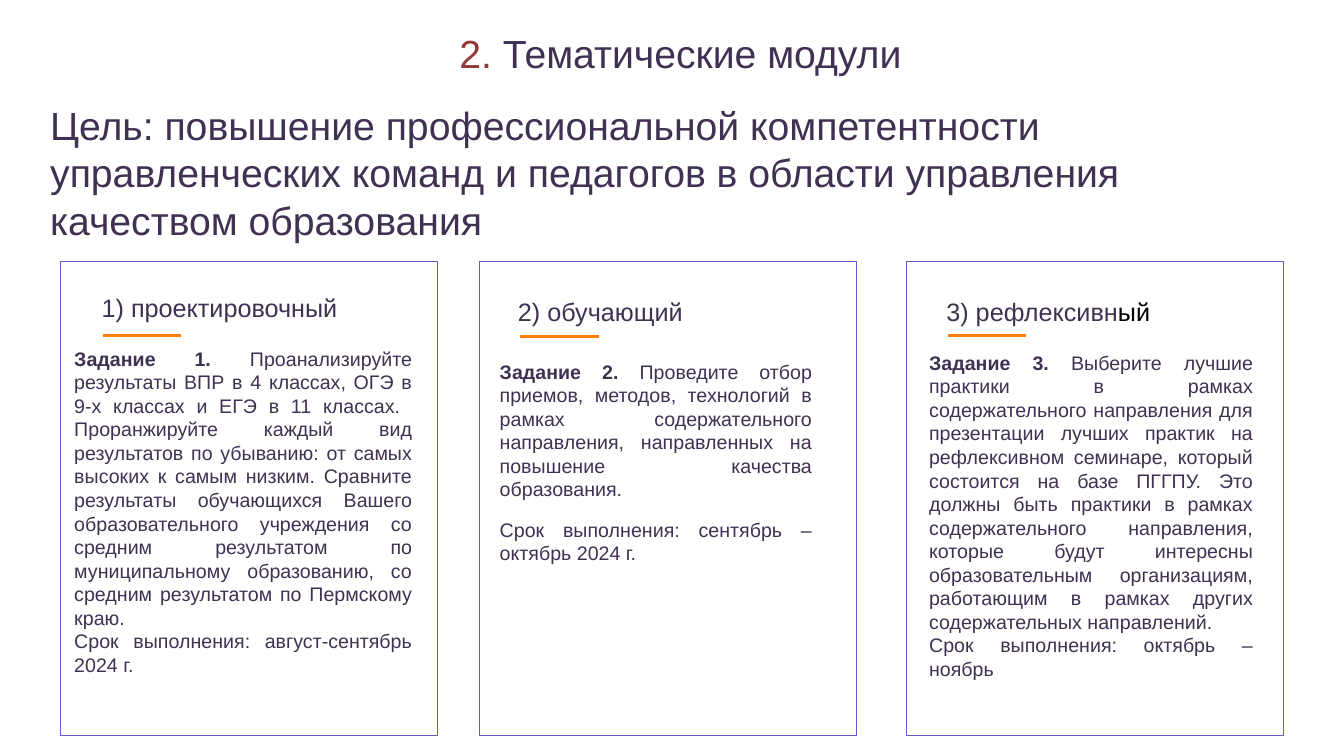
from lxml import etree
from pptx import Presentation
from pptx import util as u
from pptx.dml.color import RGBColor
from pptx.enum import shapes, text
from pptx.oxml.ns import qn

PLUM = RGBColor(0x40, 0x31, 0x52)
BRICK = RGBColor(0x95, 0x37, 0x35)
VIOLET = RGBColor(0x71, 0x54, 0xC6)
ORANGE = RGBColor(0xFF, 0x7E, 0x00)
BLACK = RGBColor(0, 0, 0)

PANEL_TOP, PANEL_W, PANEL_H = 186.5, 269.3, 339
RULE_W = 56

TITLE = [[("2. ", {"color": BRICK}), ("Тематические модули", {})]]
GOAL = [[("Цель: повышение профессиональной компетентности управленческих "
          "команд и педагогов в области управления качеством образования", {})]]

# Boxes are (left, top, width, height) in points; rule is (left, y)
MODULES = [
    {
        "panel": 43.2, "rule": (73.4, 239.8),
        "heading": [("1) проектировочный", {})],
        "heading_box": (65.5, 205.2, 202.3, 29),
        "task": ("Задание 1. ",
                 "Проанализируйте результаты ВПР в 4 классах, ОГЭ в 9-х классах "
                 "и ЕГЭ в 11 классах.  Проранжируйте каждый вид результатов по "
                 "убыванию: от самых высоких к самым низким. Сравните результаты "
                 "обучающихся Вашего образовательного учреждения со средним "
                 "результатом по муниципальному образованию, со средним "
                 "результатом по Пермскому краю. "),
        "deadline": "Срок выполнения: август-сентябрь 2024 г. ",
        "task_box": (44.6, 244.1, 257, 262), "gap": 0, "right_inset": 7.2,
    },
    {
        "panel": 342.7, "rule": (371.6, 240.5),
        "heading": [("2) обучающий", {})],
        "heading_box": (362.9, 208, 174.2, 29),
        "task": ("Задание 2. ",
                 "Проведите отбор приемов, методов, технологий в рамках "
                 "содержательного направления, направленных на повышение "
                 "качества образования."),
        "deadline": "Срок выполнения: сентябрь – октябрь 2024 г. ",
        "task_box": (348.5, 253.4, 252, 184.3), "gap": 12, "right_inset": 20.4,
    },
    {
        "panel": 647.3, "rule": (677, 239.8),
        "heading": [("3) рефлексивн", {}), ("ый", {"color": BLACK})],
        "heading_box": (668.9, 208, 226, 29),
        "task": ("Задание 3.",
                 " Выберите лучшие практики в рамках содержательного направления "
                 "для презентации лучших практик на рефлексивном семинаре, "
                 "который состоится на базе ПГГПУ. Это должны быть практики в "
                 "рамках содержательного направления, которые будут интересны "
                 "образовательным организациям, работающим в рамках других "
                 "содержательных направлений."),
        "deadline": "Срок выполнения: октябрь –ноябрь",
        "task_box": (655.2, 247, 247, 296), "gap": 0, "right_inset": 7.2,
    },
]


class SlideBuilder:
    def __init__(self, slide, font="Arial", color=PLUM):
        self.s, self.font, self.color = slide, font, color

    def panel(self, left, top, width, height):
        sp = self.s.shapes.add_shape(shapes.MSO_SHAPE.RECTANGLE,
                                     *map(u.Pt, (left, top, width, height)))
        sp.shadow.inherit = False
        sp.fill.background()
        sp.line.color.rgb = VIOLET
        sp.line.width = u.Pt(0.75)

    def rule(self, left, y):
        ln = self.s.shapes.add_connector(shapes.MSO_CONNECTOR.STRAIGHT,
                                         *map(u.Pt, (left, y, left + RULE_W, y)))
        ln.line.color.rgb = ORANGE
        ln.line.width = u.Pt(2.25)
        etree.SubElement(ln._element.spPr, qn("a:effectLst"))

    def text(self, box, paragraphs, size, frame=None, para=None, indent=0, gap=0):
        """Add a text box; each paragraph is a list of (text, font overrides)."""
        tf = self.s.shapes.add_textbox(*map(u.Pt, box)).text_frame
        frame = {"word_wrap": True,
                 "auto_size": text.MSO_AUTO_SIZE.SHAPE_TO_FIT_TEXT, **(frame or {})}
        for name, value in frame.items():
            setattr(tf, name, value)
        for i, runs in enumerate(paragraphs):
            p = tf.add_paragraph() if i else tf.paragraphs[0]
            for name, value in (para or {}).items():
                setattr(p, name, value)
            if indent:
                p._p.get_or_add_pPr().set("marL", str(u.Pt(indent)))
            if i and gap:
                p.space_before = u.Pt(gap)
            for content, fmt in runs:
                r = p.add_run()
                r.text = content
                style = {"name": self.font, "size": u.Pt(size), **fmt}
                r.font.color.rgb = style.pop("color", self.color)
                for name, value in style.items():
                    setattr(r.font, name, value)

    def module(self, m):
        self.panel(m["panel"], PANEL_TOP, PANEL_W, PANEL_H)
        self.rule(*m["rule"])
        self.text(m["heading_box"], [m["heading"]], 18)
        label, body = m["task"]
        self.text(m["task_box"],
                  [[(label, {"bold": True}), (body, {})], [(m["deadline"], {})]], 14,
                  frame={"margin_right": u.Pt(m["right_inset"])},
                  para={"alignment": text.PP_ALIGN.JUSTIFY},
                  indent=1.4, gap=m["gap"])


def main():
    prs = Presentation()
    prs.slide_width, prs.slide_height = u.Pt(960), u.Pt(540)
    b = SlideBuilder(prs.slides.add_slide(prs.slide_layouts[6]))
    b.text((321, 24.5, 449.3, 33.8), TITLE, 28,
           frame={"auto_size": text.MSO_AUTO_SIZE.NONE,
                  "vertical_anchor": text.MSO_ANCHOR.BOTTOM},
           para={"line_spacing": 0.9})
    b.text((28.8, 69.1, 873.4, 108.7), GOAL, 28)
    for m in MODULES:
        b.module(m)
    prs.save("out.pptx")


if __name__ == "__main__":
    main()
